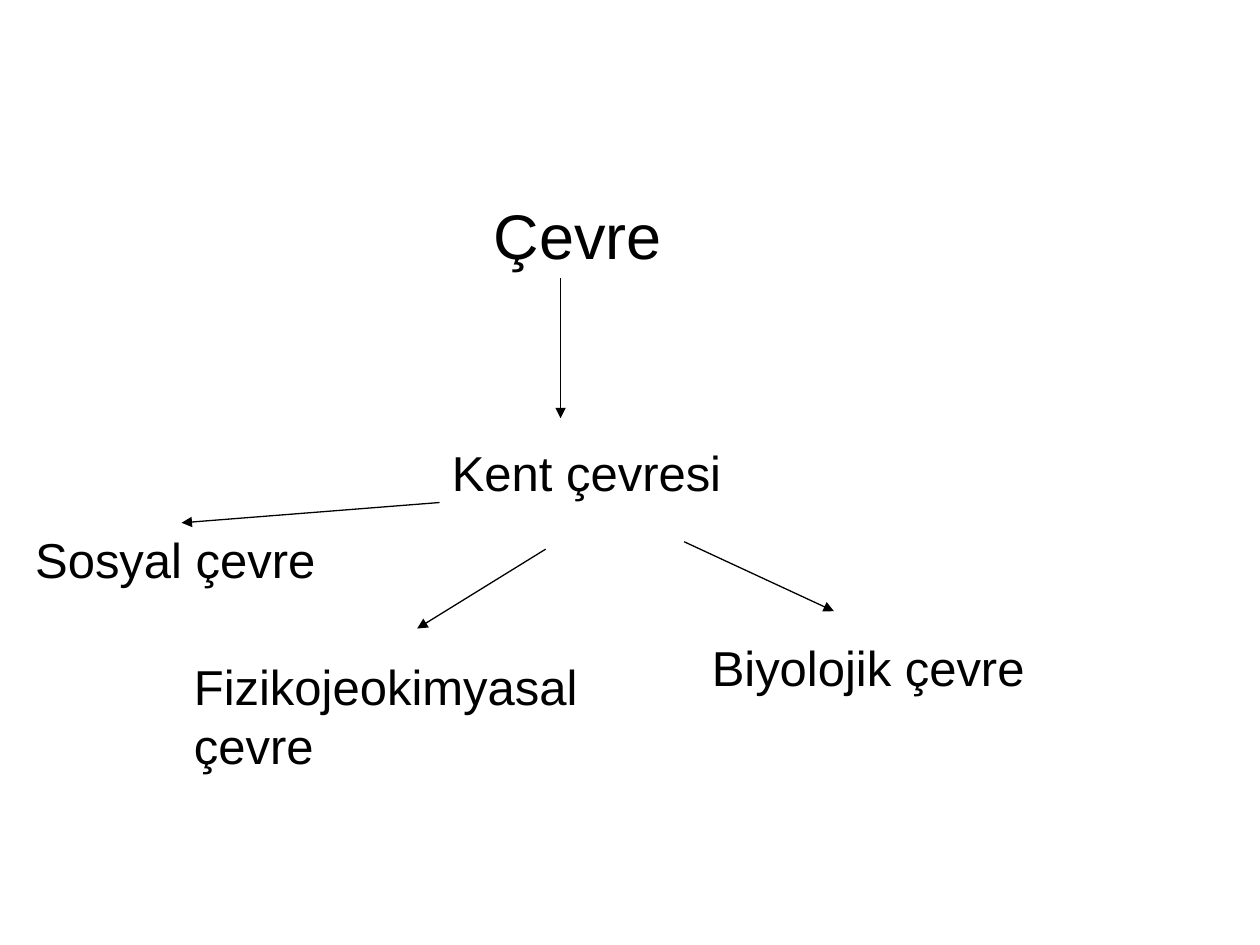
from lxml import etree
from pptx import Presentation
from pptx.dml.color import RGBColor
from pptx.enum.shapes import MSO_CONNECTOR
from pptx.enum.text import MSO_AUTO_SIZE
from pptx.oxml.ns import qn
from pptx.util import Cm, Pt

STRAIGHT = MSO_CONNECTOR.STRAIGHT
GROW = MSO_AUTO_SIZE.SHAPE_TO_FIT_TEXT
BLANK_LAYOUT = 6
BLACK = "000000"

# Text, left, top, width, height (cm), size (pt)
LABELS = [
    ("Çevre", 9.7, 3.84, 4.39, 1.8, 36),
    ("Kent çevresi", 8.86, 8.79, 6.43, 1.45, 28),
    ("Fizikojeokimyasal çevre", 3.66, 13.11, 8.79, 2.64, 28),
    ("Sosyal çevre", 0.46, 10.54, 6.4, 1.45, 28),
    ("Biyolojik çevre", 14.1, 12.73, 8, 1.45, 28),
]

# Start and end points (cm)
ARROWS = [
    ((11.3, 5.61), (11.3, 8.43)),
    ((11, 11.07), (8.41, 12.67)),
    ((8.86, 10.13), (3.66, 10.54)),
    ((13.79, 10.92), (16.81, 12.32)),
]


def color(value):
    return RGBColor.from_string(value)


def set_format(target, values):
    for name, value in values.items():
        setattr(target, name, value)


def add_label(page, text, left, top, width, height, size):
    box = page.shapes.add_textbox(Cm(left), Cm(top), Cm(width), Cm(height))
    set_format(box.text_frame, {"word_wrap": True, "auto_size": GROW})
    para = box.text_frame.paragraphs[0]
    # Space before as a share of the line height
    before = etree.SubElement(para._p.get_or_add_pPr(), qn("a:spcBef"))
    etree.SubElement(before, qn("a:spcPct"), val="50000")
    span = para.add_run()
    span.text = text
    set_format(span.font, {"name": "Arial", "size": Pt(size)})
    span.font.color.rgb = color(BLACK)


def add_arrow(page, start, end):
    points = [Cm(value) for value in start + end]
    arrow = page.shapes.add_connector(STRAIGHT, *points)
    arrow.line.color.rgb = color(BLACK)
    arrow.line.width = Pt(0.75)
    etree.SubElement(arrow.line._get_or_add_ln(), qn("a:tailEnd"), type="triangle")
    # No theme shadow
    etree.SubElement(arrow._element.spPr, qn("a:effectLst"))


def main():
    deck = Presentation()
    set_format(deck, {"slide_width": Cm(25.4), "slide_height": Cm(19.05)})
    page = deck.slides.add_slide(deck.slide_layouts[BLANK_LAYOUT])
    for label in LABELS:
        add_label(page, *label)
    for start, end in ARROWS:
        add_arrow(page, start, end)
    deck.save("out.pptx")


if __name__ == "__main__":
    main()
